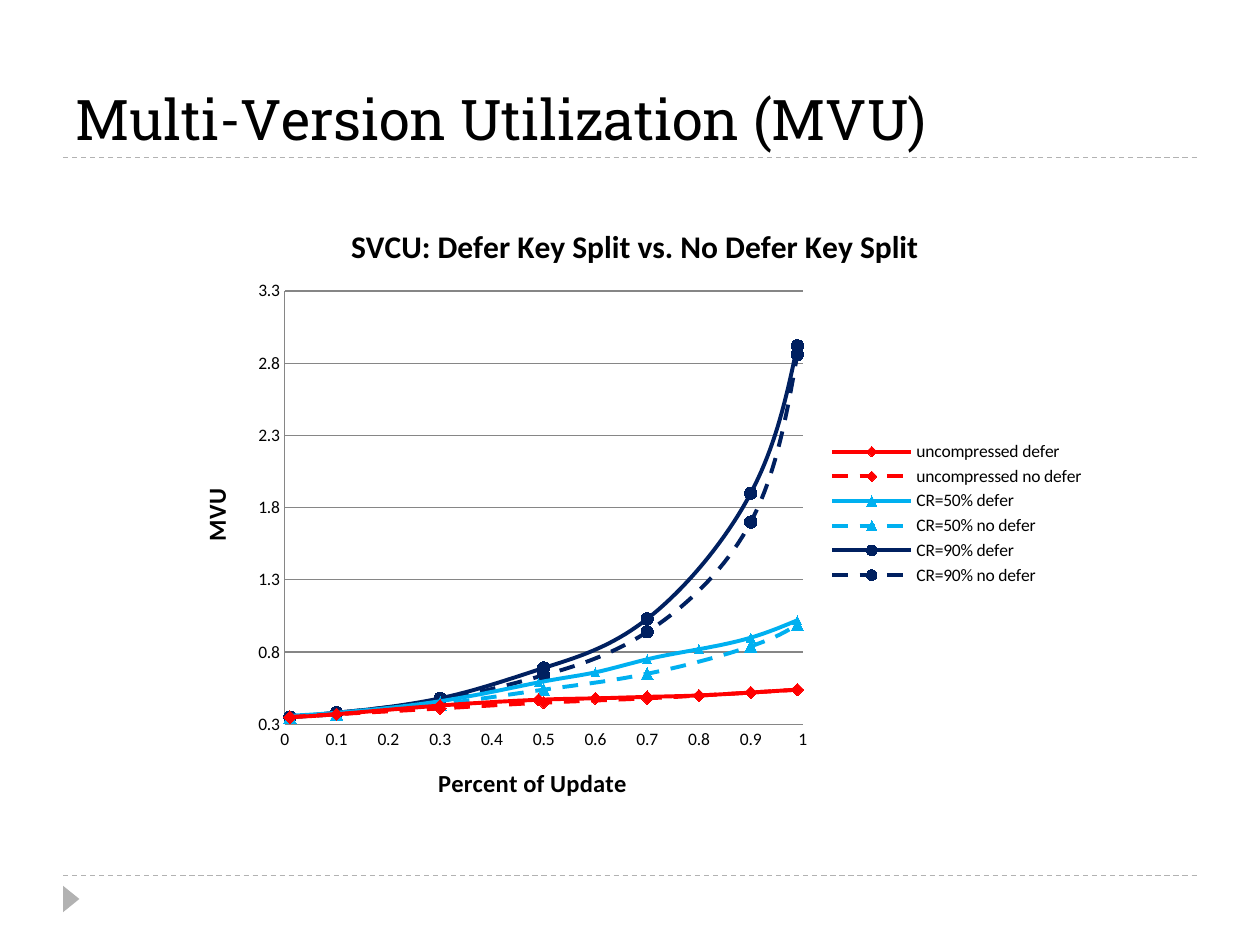
import dataclasses
import lxml.etree
import pptx
import pptx.chart.data
import pptx.dml.color
import pptx.enum.chart
import pptx.enum.dml
import pptx.enum.shapes
import pptx.enum.text
import pptx.oxml
import pptx.oxml.ns
import pptx.util

Inches = pptx.util.Inches
Pt = pptx.util.Pt
RGB = pptx.dml.color.RGBColor.from_string
DASH = pptx.enum.dml.MSO_LINE.DASH
MARKER = pptx.enum.chart.XL_MARKER_STYLE


@dataclasses.dataclass(frozen=True)
class Theme:
    title_font: str = "Roboto Slab"
    chart_font: str = "Calibri"
    text: str = "000000"
    rule: str = "B2B2B2"
    grid: str = "868686"
    red: str = "FF0000"
    blue: str = "00B0F0"
    navy: str = "002060"
    title_size: int = 32
    chart_title_size: int = 18
    axis_title_size: int = 14
    label_size: int = 10
    rule_width: float = 0.75
    series_width: float = 2.25


class SlideBuilder:
    """Draws styled elements on the current slide."""

    def __init__(self, theme, slide):
        self.theme = theme
        self.slide = slide

    def rule(self, y):
        cxn = self.slide.shapes.add_connector(
            pptx.enum.shapes.MSO_CONNECTOR.STRAIGHT,
            Inches(0.5), Inches(y), Inches(9.5), Inches(y))
        self.style_line(cxn.line, self.theme.rule, self.theme.rule_width, DASH)
        lxml.etree.SubElement(cxn._element.spPr, pptx.oxml.ns.qn("a:effectLst"))

    def triangle(self, x, y, w, h):
        sp = self.slide.shapes.add_shape(
            pptx.enum.shapes.MSO_SHAPE.ISOSCELES_TRIANGLE,
            Inches(x), Inches(y), Inches(w), Inches(h))
        sp.rotation = 90
        sp.shadow.inherit = False
        sp.fill.solid()
        sp.fill.fore_color.rgb = RGB(self.theme.rule)
        sp.line.fill.background()

    def title(self, text, x, y, w, h):
        tf = self.slide.shapes.add_textbox(
            Inches(x), Inches(y), Inches(w), Inches(h)).text_frame
        tf.word_wrap = True
        tf.vertical_anchor = pptx.enum.text.MSO_ANCHOR.BOTTOM
        p = tf.paragraphs[0]
        p.text = text
        self.style_font(p.font, self.theme.title_font, self.theme.title_size)

    def scatter(self, title, series, x, y, w, h):
        data = pptx.chart.data.XyChartData()
        for name, points, *_ in series:
            xy = data.add_series(name)
            for px, py in points:
                xy.add_data_point(px, py)
        gf = self.slide.shapes.add_chart(
            pptx.enum.chart.XL_CHART_TYPE.XY_SCATTER_SMOOTH,
            Inches(x), Inches(y), Inches(w), Inches(h), data)
        chart = gf.chart
        self.style_font(chart.font, self.theme.chart_font, self.theme.label_size)
        chart.has_title = True
        self.chart_title(chart.chart_title, title, self.theme.chart_title_size)
        chart.has_legend = True
        chart.legend.position = pptx.enum.chart.XL_LEGEND_POSITION.RIGHT
        chart.legend.include_in_layout = False
        plot = chart.plots[0]
        plot.vary_by_categories = False
        for ser, (_, _, *style) in zip(list(plot.series), series):
            self.style_series(ser, *style)
        return gf

    def style_series(self, ser, color, marker, size, dash, order):
        ser._element.get_or_add_smooth().val = True
        ser._element.order.val = order
        self.style_line(ser.format.line, color, self.theme.series_width, dash)
        ser.marker.style = marker
        ser.marker.size = size
        ser.marker.format.fill.solid()
        ser.marker.format.fill.fore_color.rgb = RGB(color)
        self.style_line(ser.marker.format.line, color, self.theme.rule_width)

    def axis(self, axis, title, low, high, step, grid=False, rotation=0):
        axis.minimum_scale, axis.maximum_scale = low, high
        axis.major_unit = step
        axis.major_tick_mark = pptx.enum.chart.XL_TICK_MARK.NONE
        axis.crosses = pptx.enum.chart.XL_AXIS_CROSSES.MINIMUM
        axis.tick_labels.number_format = "General"
        axis.tick_labels.number_format_is_linked = False
        self.style_line(axis.format.line, self.theme.grid, self.theme.rule_width)
        axis.has_major_gridlines = grid
        if grid:
            self.style_line(axis.major_gridlines.format.line,
                            self.theme.grid, self.theme.rule_width)
        self.chart_title(axis.axis_title, title, self.theme.axis_title_size, rotation)

    def chart_title(self, title, text, size, rotation=0):
        tf = title.text_frame
        tf._txBody.bodyPr.set("rot", str(rotation * 60000))
        p = tf.paragraphs[0]
        p.text = text
        self.style_font(p.font, self.theme.chart_font, size)
        p.font.bold = True

    def plot_layout(self, gf, x, y, w, h):
        area = gf.chart._chartSpace.chart.plotArea
        for old in area.findall(pptx.oxml.ns.qn("c:layout")):
            area.remove(old)
        parts = [("layoutTarget", "inner"), ("xMode", "edge"), ("yMode", "edge"),
                 ("x", Inches(x) / gf.width), ("y", Inches(y) / gf.height),
                 ("w", Inches(w) / gf.width), ("h", Inches(h) / gf.height)]
        body = "".join(f'<c:{tag} val="{val}"/>' for tag, val in parts)
        area.insert(0, pptx.oxml.parse_xml(
            f'<c:layout {pptx.oxml.ns.nsdecls("c")}>'
            f"<c:manualLayout>{body}</c:manualLayout></c:layout>"))

    def style_font(self, font, name, size):
        font.name = name
        font.size = Pt(size)
        font.bold = False
        font.color.rgb = RGB(self.theme.text)

    def style_line(self, line, color, width, dash=None):
        line.color.rgb = RGB(color)
        line.width = Pt(width)
        if dash:
            line.dash_style = dash


def update_series(theme):
    defer_x = [0.01, 0.1, 0.3, 0.49, 0.6, 0.7, 0.8, 0.9, 0.99]
    short_x = [0.01, 0.1, 0.3, 0.5, 0.7, 0.9, 0.99]
    red = theme.red, MARKER.DIAMOND
    blue = theme.blue, MARKER.TRIANGLE
    navy = theme.navy, MARKER.CIRCLE
    rows = [
        ("uncompressed defer", defer_x,
         [0.35, 0.37, 0.43, 0.47, 0.48, 0.49, 0.5, 0.52, 0.54], red, 7, None, 2),
        ("uncompressed no defer", short_x,
         [0.35, 0.37, 0.41, 0.45, 0.48, 0.52, 0.54], red, 7, DASH, 3),
        ("CR=50% defer", defer_x,
         [0.36, 0.38, 0.46, 0.59, 0.66, 0.75, 0.82, 0.9, 1.02], blue, 5, None, 0),
        ("CR=50% no defer", short_x,
         [0.35, 0.37, 0.44, 0.54, 0.65, 0.84, 0.99], blue, 7, DASH, 1),
        ("CR=90% defer", short_x,
         [0.35, 0.38, 0.48, 0.69, 1.03, 1.9, 2.92], navy, 7, None, 4),
        ("CR=90% no defer", short_x,
         [0.35, 0.38, 0.47, 0.64, 0.94, 1.7, 2.86], navy, 7, DASH, 5),
    ]
    return [(name, list(zip(xs, ys)), *look, size, dash, order)
            for name, xs, ys, look, size, dash, order in rows]


def main():
    prs = pptx.Presentation()
    prs.slide_width, prs.slide_height = Inches(10), Inches(7.5)
    theme = Theme()
    s = SlideBuilder(theme, prs.slides.add_slide(prs.slide_layouts[6]))
    for y in (6.95, 1.25):
        s.rule(y)
    s.triangle(0.46, 7.07, 0.21, 0.13)
    s.title("Multi-Version Utilization (MVU)", 0.5, 0.17, 9, 1.08)
    gf = s.scatter("SVCU: Defer Key Split vs. No Defer Key Split",
                   update_series(theme), 1.37, 1.58, 7.34, 4.99)
    s.axis(gf.chart.category_axis, "Percent of Update", 0, 1, 0.1)
    s.axis(gf.chart.value_axis, "MVU", 0.3, 3.3, 0.5, grid=True, rotation=-90)
    s.plot_layout(gf, 0.89, 0.73, 4.11, 3.44)
    prs.save("out.pptx")


if __name__ == "__main__":
    main()
